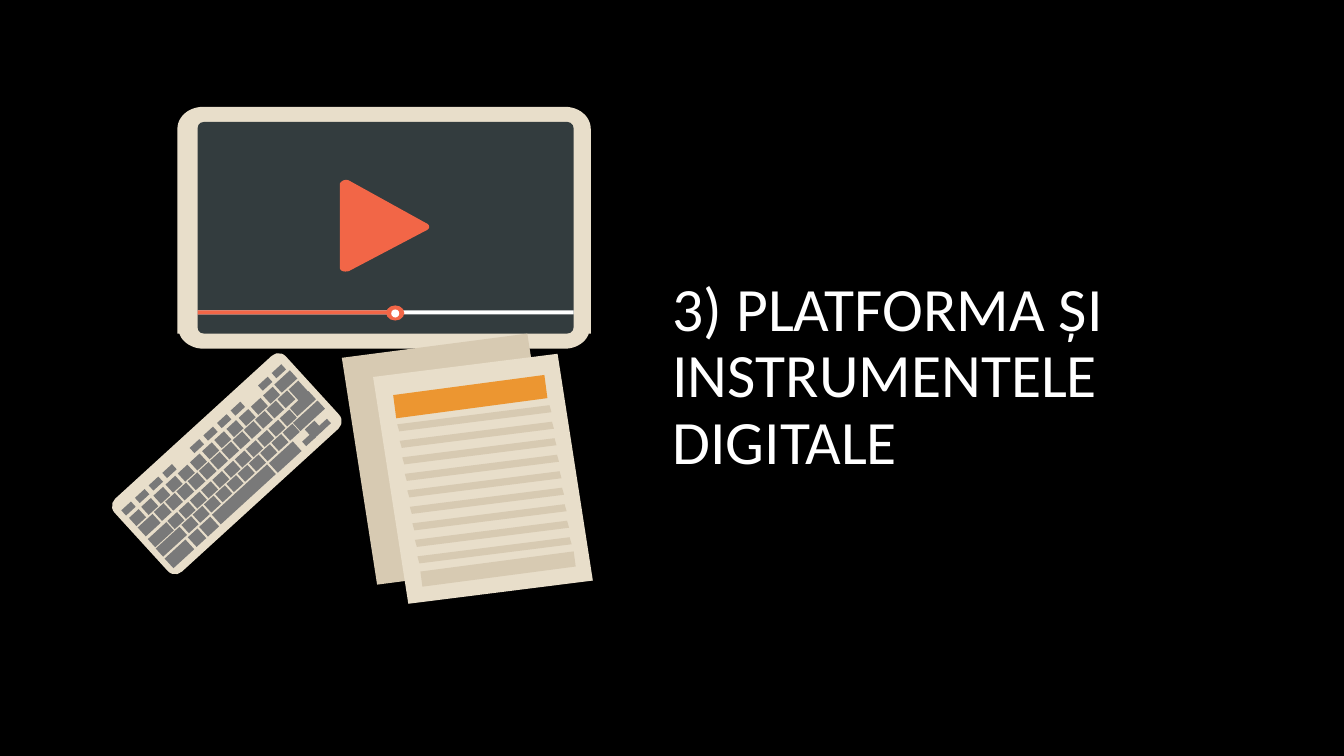
import math

from pptx import Presentation, util as u
from pptx.dml.color import RGBColor
from pptx.enum import shapes, text

CREAM, SAND, SLATE = "E8DECA", "D7CAB2", "333C3E"
CORAL, ORANGE, GREY, WHITE = "F26647", "EC9631", "797979", "FFFFFF"
RECT = shapes.MSO_SHAPE.RECTANGLE
ROUNDED = shapes.MSO_SHAPE.ROUNDED_RECTANGLE
OVAL = shapes.MSO_SHAPE.OVAL
KEY_ANGLE = 317.6


def rgb(color):
    return RGBColor.from_string(color)


def paint(part, color):
    part.fill.solid()
    part.fill.fore_color.rgb = rgb(color)
    part.line.fill.background()
    part.shadow.inherit = False


def preset(group, kind, box, color, angle=0, corner=None):
    part = group.shapes.add_shape(kind, *[u.Inches(v) for v in box])
    part.rotation = angle
    if corner is not None:
        part.adjustments[0] = corner
    paint(part, color)


def curve(start, bend_a, bend_b, end, steps=12):
    """Points along a cubic curve."""
    points = []
    for i in range(steps + 1):
        t = i / steps
        weights = ((1 - t) ** 3, 3 * t * (1 - t) ** 2, 3 * t * t * (1 - t), t ** 3)
        corners = (start, bend_a, bend_b, end)
        points.append(tuple(sum(w * c[axis] for w, c in zip(weights, corners))
                            for axis in (0, 1)))
    return points


def outline(group, left, top, points, color):
    emu = [(u.Inches(left + x), u.Inches(top + y)) for x, y in points]
    builder = group.shapes.build_freeform(*emu[0])
    builder.add_line_segments(emu[1:], close=True)
    paint(builder.convert_to_shape(), color)


def slanted(group, left, top, width, rise, shift, depth, color):
    """A sheet or band whose top edge climbs to the right."""
    corners = [(0, rise), (width, 0), (width + shift, depth), (shift, depth + rise)]
    outline(group, left, top, corners, color)


def draw_title(slide, left, top, width, height):
    title = slide.shapes.title
    title.left, title.top = u.Inches(left), u.Inches(top)
    title.width, title.height = u.Inches(width), u.Inches(height)
    frame = title.text_frame
    frame.text = "3) PLATFORMA ȘI INSTRUMENTELE DIGITALE"
    frame.word_wrap = True
    frame.auto_size = text.MSO_AUTO_SIZE.NONE
    frame.vertical_anchor = text.MSO_ANCHOR.BOTTOM
    heading = frame.paragraphs[0]
    heading.alignment = text.PP_ALIGN.LEFT
    heading.line_spacing = 0.9
    font = heading.runs[0].font
    font.name, font.size = "Calibri", u.Pt(44)
    font.color.rgb = rgb(WHITE)


def draw_screen(slide, left, top, width, height):
    group = slide.shapes.add_group_shape()
    # Frame: the left half is mirrored to give the right half
    half = (curve((0.26, 0), (0.11, 0), (0, 0.1), (0, 0.22))
            + [(0, height - 0.15)]
            + curve((0.02, height - 0.15), (0.04, height - 0.08),
                    (0.13, height), (0.26, height)))
    mirrored = [(width - x, y) for x, y in reversed(half)]
    outline(group, left, top, half + mirrored, CREAM)
    # Glass
    glass_left, glass_width = left + 0.2, width - 0.37
    preset(group, ROUNDED, (glass_left, top + 0.15, glass_width, height - 0.3),
           SLATE, corner=0.03)
    # Play button
    play = (curve((2.46, 1.15), (2.51, 1.17), (2.51, 1.21), (2.46, 1.23))
            + curve((1.7, 1.63), (1.65, 1.64), (1.61, 1.63), (1.61, 1.59))
            + curve((1.61, 0.77), (1.61, 0.75), (1.65, 0.71), (1.7, 0.73)))
    outline(group, left, top, play, CORAL)
    # Progress bar and knob
    for length, color in ((glass_width, WHITE), (1.96, CORAL)):
        preset(group, RECT, (glass_left, top + 2.02, length, 0.04), color)
    preset(group, OVAL, (left + 2.07, top + 1.97, 0.18, 0.15), CORAL)
    preset(group, OVAL, (left + 2.12, top + 2.01, 0.08, 0.08), WHITE)


def draw_keyboard(slide, left, top, width, height):
    group = slide.shapes.add_group_shape()
    preset(group, ROUNDED, (left, top + 0.61, width, height), CREAM, KEY_ANGLE, 0.1)
    # Rows of equal keys: first x, first y, row length, key height, key count, gaps
    rows = [
        (0.11, 1.51, 2.02, 0.07, 12, (4, 9)),
        (0.2, 1.58, 1.8, 0.11, 12, ()),
        (0.45, 1.52, 1.66, 0.12, 12, ()),
        (0.58, 1.61, 1.51, 0.11, 11, ()),
        (0.72, 1.65, 1.36, 0.11, 10, ()),
    ]
    # Keys of special size: x, y, width, height
    keys = [
        (0.28, 1.65, 0.2, 0.12), (0.37, 1.75, 0.25, 0.11), (0.44, 1.82, 0.32, 0.11),
        (1.8, 0.3, 0.13, 0.16), (1.78, 0.45, 0.25, 0.11), (1.63, 0.23, 0.21, 0.11),
        (1.8, 0.57, 0.33, 0.11), (0.95, 1.34, 0.74, 0.13), (0.54, 1.93, 0.28, 0.13),
        (1.57, 0.97, 0.32, 0.13), (0.79, 1.77, 0.13, 0.13), (0.9, 1.66, 0.15, 0.13),
        (1.9, 0.83, 0.13, 0.06), (1.95, 0.7, 0.13, 0.13), (2.05, 0.69, 0.13, 0.06),
    ]
    across = math.cos(math.radians(KEY_ANGLE))
    down = math.sin(math.radians(KEY_ANGLE))
    for x, y, length, key_height, count, gaps in rows:
        pitch = length / (count - 1)
        keys += [(x + n * pitch * across, y + n * pitch * down, 0.13, key_height)
                 for n in range(count) if n not in gaps]
    for x, y, key_width, key_height in keys:
        preset(group, RECT, (left + x, top + y, key_width, key_height),
               GREY, KEY_ANGLE)


def draw_papers(slide, left, top):
    group = slide.shapes.add_group_shape()
    # Back sheet, front sheet, heading band
    slanted(group, left, top, 1.84, 0.24, 0.35, 2.25, SAND)
    slanted(group, left + 0.31, top + 0.2, 1.83, 0.23, 0.35, 2.25, CREAM)
    slanted(group, left + 0.51, top + 0.41, 1.5, 0.2, 0.03, 0.23, ORANGE)
    # Lines of writing and the closing block
    line_count = 9
    for n in range(line_count):
        share = n / (line_count - 1)
        slanted(group, left + 0.55 + 0.2 * share, top + 0.71 + 1.31 * share,
                1.51, 0.19, 0.02, 0.07, SAND)
    slanted(group, left + 0.78, top + 2.16, 1.52, 0.2, 0.02, 0.15, SAND)


def main():
    deck = Presentation()
    deck.slide_width, deck.slide_height = u.Inches(13.33), u.Inches(7.5)
    slide = deck.slides.add_slide(deck.slide_layouts[5])
    slide.background.fill.solid()
    slide.background.fill.fore_color.rgb = rgb("000000")
    draw_title(slide, 6.57, 2.18, 5.15, 2.61)
    draw_screen(slide, 1.76, 1.06, 4.1, 2.4)
    draw_keyboard(slide, 1.1, 3.5, 2.3, 0.98)
    draw_papers(slide, 3.39, 3.31)
    deck.save("out.pptx")


if __name__ == "__main__":
    main()
